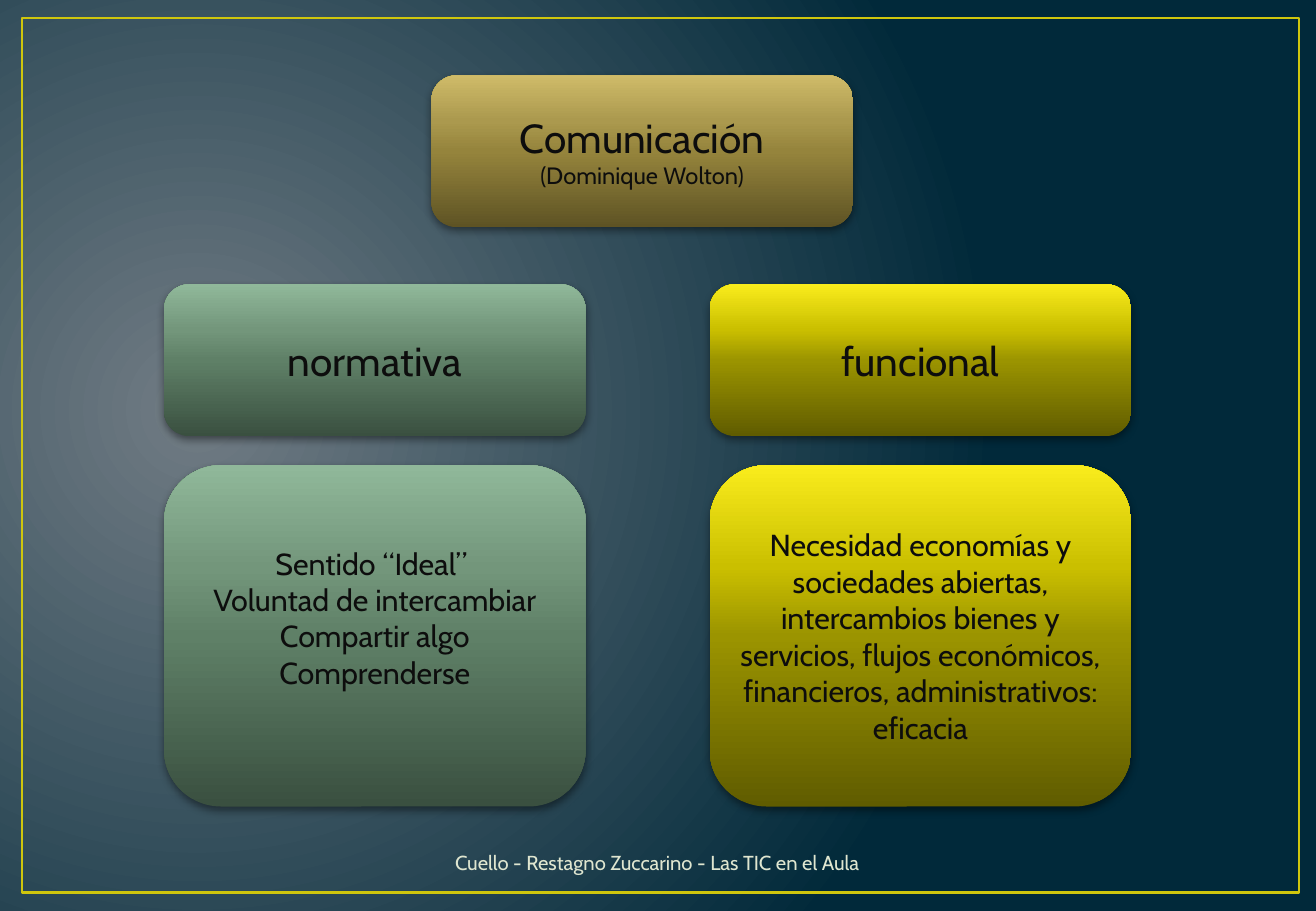
"""Build a slide on the normative and functional senses of communication."""
from pptx import Presentation
from pptx.dml.color import RGBColor
from pptx.enum.shapes import MSO_SHAPE
from pptx.enum.text import MSO_ANCHOR, PP_ALIGN
from pptx.oxml import parse_xml
from pptx.oxml.ns import nsdecls, qn
from pptx.util import Inches, Pt

RECT, ROUNDED = MSO_SHAPE.RECTANGLE, MSO_SHAPE.ROUNDED_RECTANGLE
CENTER, MIDDLE = PP_ALIGN.CENTER, MSO_ANCHOR.MIDDLE
FONT = "Cabin"
INK = RGBColor(0x0D, 0x0D, 0x0D)
CREDIT = RGBColor(0xDF, 0xE6, 0xD0)
FRAME = RGBColor(0xCF, 0xC6, 0x0D)
SHADOW = RGBColor(0x00, 0x00, 0x00)
BACKDROP = {0: RGBColor(0x71, 0x7C, 0x84), 100: RGBColor(0x01, 0x29, 0x3A)}
GOLD = {0: RGBColor(0x5E, 0x53, 0x24), 50: RGBColor(0x95, 0x84, 0x3C),
        70: RGBColor(0xAB, 0x99, 0x4E), 100: RGBColor(0xCF, 0xBB, 0x69)}
GREEN = {0: RGBColor(0x3A, 0x50, 0x40), 50: RGBColor(0x5F, 0x80, 0x67),
         70: RGBColor(0x73, 0x96, 0x7B), 100: RGBColor(0x90, 0xB8, 0x9A)}
YELLOW = {0: RGBColor(0x60, 0x5C, 0x00), 50: RGBColor(0x9B, 0x94, 0x00),
          70: RGBColor(0xCA, 0xBF, 0x00), 100: RGBColor(0xF9, 0xEC, 0x1C)}
UPWARD = '<a:lin ang="16200000" scaled="0"/>'
RADIAL = ('<a:path path="circle">'
          '<a:fillToRect l="15000" t="50000" r="85000" b="60000"/></a:path>')
CARD_WIDTH, HEAD_HEIGHT, BODY_HEIGHT = 3.47, 1.25, 2.81
HEAD_TOP, BODY_TOP = 2.34, 3.83
SENSES = [
    (1.35, GREEN, "normativa",
     ["Sentido “Ideal” ", "Voluntad de intercambiar", "Compartir algo",
      "Comprenderse"], 0.35),
    (5.84, YELLOW, "funcional",
     ["Necesidad economías y sociedades abiertas, intercambios bienes y "
      "servicios, flujos económicos, financieros, administrativos: eficacia"],
     0.05),
]


def paint_gradient(properties, stops, direction):
    """Replace a solid fill with a gradient."""
    marks = "".join(
        f'<a:gs pos="{percent * 1000}"><a:srgbClr val="{color}"/></a:gs>'
        for percent, color in stops.items())
    gradient = parse_xml(
        f'<a:gradFill {nsdecls("a")} rotWithShape="1">'
        f'<a:gsLst>{marks}</a:gsLst>{direction}</a:gradFill>')
    properties.replace(properties.find(qn("a:solidFill")), gradient)


def cast_shadow(card):
    """Give a card a soft shadow below it."""
    card.shadow.inherit = False
    effects = card.element.spPr.find(qn("a:effectLst"))
    effects.append(parse_xml(
        f'<a:outerShdw {nsdecls("a")} blurRad="{Pt(5)}" dist="{Pt(2)}" '
        f'dir="5400000" rotWithShape="0"><a:srgbClr val="{SHADOW}">'
        '<a:alpha val="43000"/></a:srgbClr></a:outerShdw>'))


def write_lines(holder, lines, color, bottom=0.05):
    """Write centred lines given as (text, size) pairs."""
    frame = holder.text_frame
    layout = {"word_wrap": True, "vertical_anchor": MIDDLE,
              "margin_bottom": Inches(bottom)}
    for name, value in layout.items():
        setattr(frame, name, value)
    for index, (text, size) in enumerate(lines):
        paragraph = frame.add_paragraph() if index else frame.paragraphs[0]
        paragraph.alignment = CENTER
        run = paragraph.add_run()
        run.text = text
        for name, value in {"name": FONT, "size": Pt(size)}.items():
            setattr(run.font, name, value)
        run.font.color.rgb = color


def add_card(slide, box, stops, lines, bottom=0.05):
    """Add a rounded gradient card with text."""
    card = slide.shapes.add_shape(ROUNDED, *map(Inches, box))
    card.fill.solid()
    paint_gradient(card.element.spPr, stops, UPWARD)
    card.line.fill.background()
    cast_shadow(card)
    write_lines(card, lines, INK, bottom)


def add_backdrop(slide):
    """Set the radial background and the thin frame."""
    slide.background.fill.solid()
    paint_gradient(slide.element.find(".//" + qn("p:bgPr")), BACKDROP, RADIAL)
    border = slide.shapes.add_shape(
        RECT, *map(Inches, (0.18, 0.15, 10.51, 7.2)))
    border.fill.background()
    border.line.color.rgb = FRAME
    border.line.width = Pt(1.5)
    border.shadow.inherit = False


def main():
    """Build and save the slide."""
    deck = Presentation()
    deck.slide_width, deck.slide_height = Inches(10.83), Inches(7.5)
    slide = deck.slides.add_slide(deck.slide_layouts[6])
    add_backdrop(slide)
    add_card(slide, (3.55, 0.62, CARD_WIDTH, HEAD_HEIGHT), GOLD,
             [("Comunicación", 24), ("(Dominique Wolton)", 14)])
    for left, stops, sense, traits, bottom in SENSES:
        add_card(slide, (left, HEAD_TOP, CARD_WIDTH, HEAD_HEIGHT), stops,
                 [(sense, 24)])
        add_card(slide, (left, BODY_TOP, CARD_WIDTH, BODY_HEIGHT), stops,
                 [(trait, 18) for trait in traits], bottom)
    credit = slide.shapes.add_textbox(*map(Inches, (3.35, 6.9, 4.12, 0.4)))
    write_lines(credit, [("Cuello - Restagno Zuccarino - Las TIC en el Aula", 12)],
                CREDIT)
    deck.save("out.pptx")


main()
